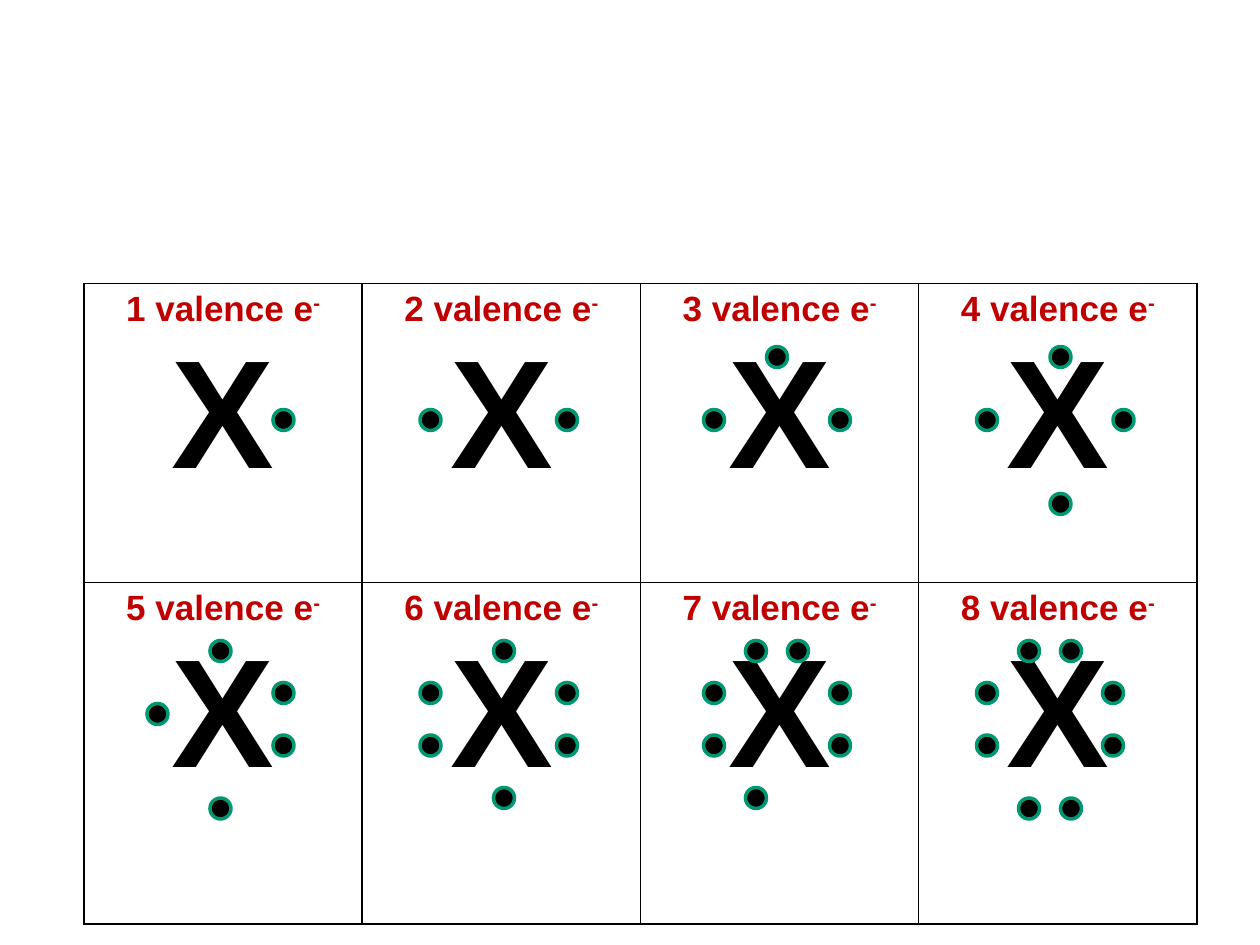
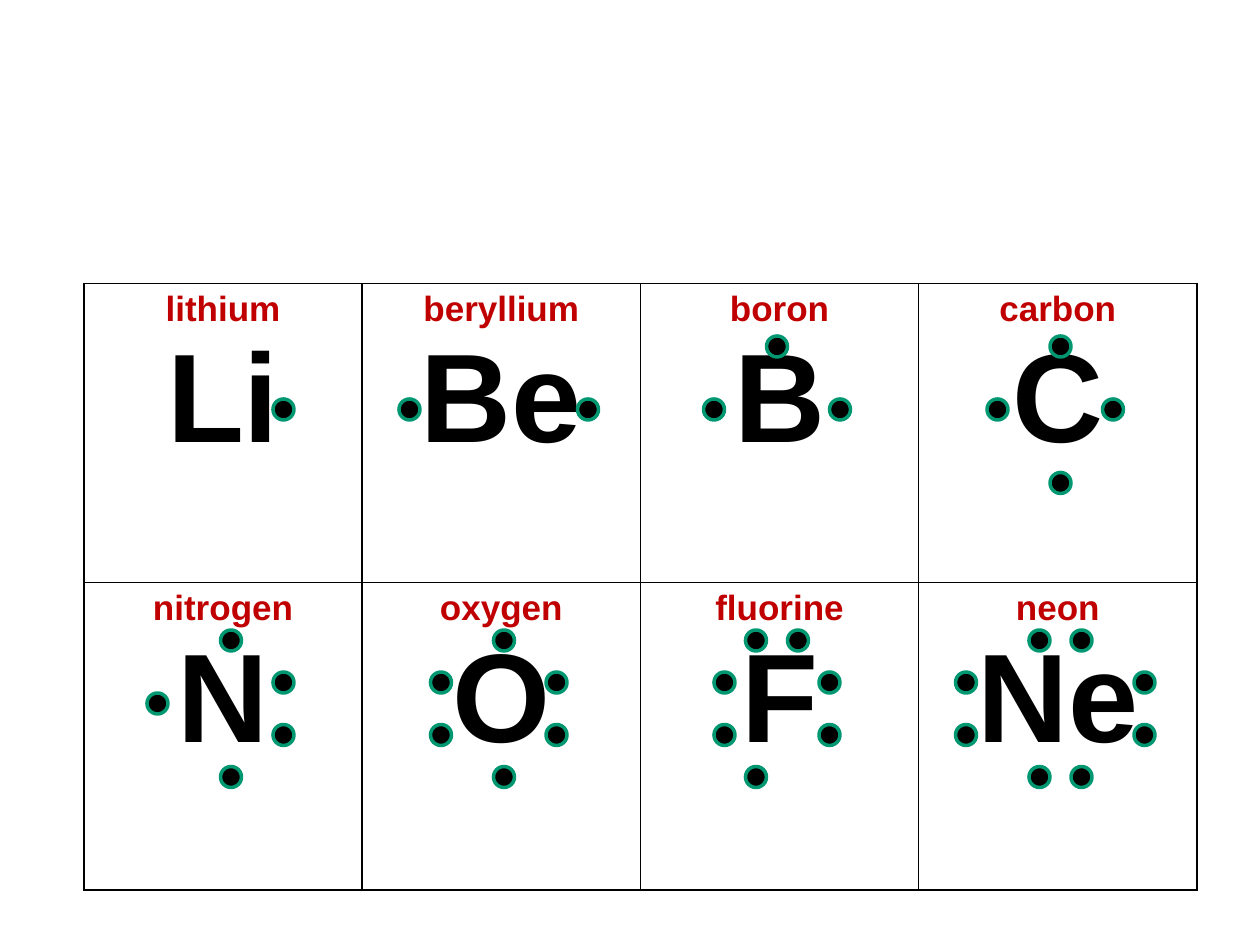
"""Build two slides of electron dot diagrams: the general pattern and the second-period elements."""
import pptx
import pptx.dml.color
import pptx.enum.shapes
import pptx.enum.text
import pptx.oxml.ns
import pptx.util
from lxml import etree

PX = 9525
FONT = "Arial"
COLORS = {"caption": "C00000", "symbol": "000000", "border": "000000",
          "electron": "000000", "electron_ring": "009771"}
COLUMNS, COLUMN_WIDTH, TOP_ROW_HEIGHT = 4, 212, 228
TABLE_LEFT, TABLE_TOP = 64, 216
ELECTRON_SIZE = 16

# Each atom is a caption, a symbol and its electrons as {top: [lefts]}.
DIAGRAMS = [
    {"symbol_size": 88, "bottom_row_height": 260, "charge": "-", "atoms": [
        ("1 valence e", "X", {312: [208]}),
        ("2 valence e", "X", {312: [320, 424]}),
        ("3 valence e", "X", {264: [584], 312: [536, 632]}),
        ("4 valence e", "X", {264: [800], 312: [744, 848], 376: [800]}),
        ("5 valence e", "X", {488: [160], 520: [208], 536: [112], 560: [208], 608: [160]}),
        ("6 valence e", "X", {488: [376], 520: [320, 424], 560: [320, 424], 600: [376]}),
        ("7 valence e", "X", {488: [568, 600], 520: [536, 632], 560: [536, 632], 600: [568]}),
        ("8 valence e", "X", {488: [776, 808], 520: [744, 840], 560: [744, 840], 608: [776, 808]}),
    ]},
    {"symbol_size": 72, "bottom_row_height": 234, "charge": "", "atoms": [
        ("lithium", "Li", {304: [208]}),
        ("beryllium", "Be", {304: [304, 440]}),
        ("boron", "B", {256: [584], 304: [536, 632]}),
        ("carbon", "C", {256: [800], 304: [752, 840], 360: [800]}),
        ("nitrogen", "N", {480: [168], 512: [208], 528: [112], 552: [208], 584: [168]}),
        ("oxygen", "O", {480: [376], 512: [328, 416], 552: [328, 416], 584: [376]}),
        ("fluorine", "F", {480: [568, 600], 512: [544, 624], 552: [544, 624], 584: [568]}),
        ("neon", "Ne", {480: [784, 816], 512: [728, 864], 552: [728, 864], 584: [784, 816]}),
    ]},
]


def rgb(role):
    """Return the colour that belongs to a role."""
    return pptx.dml.color.RGBColor.from_string(COLORS[role])


def add_line(paragraph, text, size, role):
    """Centre the paragraph and add one bold run to it."""
    paragraph.alignment = pptx.enum.text.PP_ALIGN.CENTER
    run = paragraph.add_run()
    run.text = text
    run.font.name = FONT
    run.font.size = pptx.util.Pt(size)
    run.font.bold = True
    run.font.color.rgb = rgb(role)
    return run


presentation = pptx.Presentation()
presentation.slide_width = 960 * PX
presentation.slide_height = 720 * PX

for diagram in DIAGRAMS:
    slide = presentation.slides.add_slide(presentation.slide_layouts[6])
    row_heights = [TOP_ROW_HEIGHT, diagram["bottom_row_height"]]
    atom_table = slide.shapes.add_table(
        len(row_heights), COLUMNS, TABLE_LEFT * PX, TABLE_TOP * PX,
        COLUMNS * COLUMN_WIDTH * PX, sum(row_heights) * PX).table
    atom_table.first_row = False
    atom_table.horz_banding = False
    for column in atom_table.columns:
        column.width = COLUMN_WIDTH * PX
    for row, height in zip(atom_table.rows, row_heights):
        row.height = height * PX

    for cell, (caption, symbol, electrons) in zip(atom_table.iter_cells(), diagram["atoms"]):
        caption_line = cell.text_frame.paragraphs[0]
        add_line(caption_line, caption, 20, "caption")
        if diagram["charge"]:
            charge = add_line(caption_line, diagram["charge"], 20, "caption")
            charge.font._element.set("baseline", "30000")
        add_line(cell.text_frame.add_paragraph(), symbol, diagram["symbol_size"], "symbol")

        cell_properties = cell._tc.get_or_add_tcPr()
        for side in ("a:lnL", "a:lnR", "a:lnT", "a:lnB"):
            border = etree.SubElement(cell_properties, pptx.oxml.ns.qn(side), w="12700")
            border_fill = etree.SubElement(border, pptx.oxml.ns.qn("a:solidFill"))
            etree.SubElement(border_fill, pptx.oxml.ns.qn("a:srgbClr"), val=COLORS["border"])
        cell.fill.background()

        for top, lefts in electrons.items():
            for left in lefts:
                electron = slide.shapes.add_shape(
                    pptx.enum.shapes.MSO_SHAPE.OVAL, left * PX, top * PX,
                    ELECTRON_SIZE * PX, ELECTRON_SIZE * PX)
                electron.shadow.inherit = False
                electron.fill.solid()
                electron.fill.fore_color.rgb = rgb("electron")
                electron.line.color.rgb = rgb("electron_ring")
                electron.line.width = pptx.util.Pt(2)

presentation.save("out.pptx")
